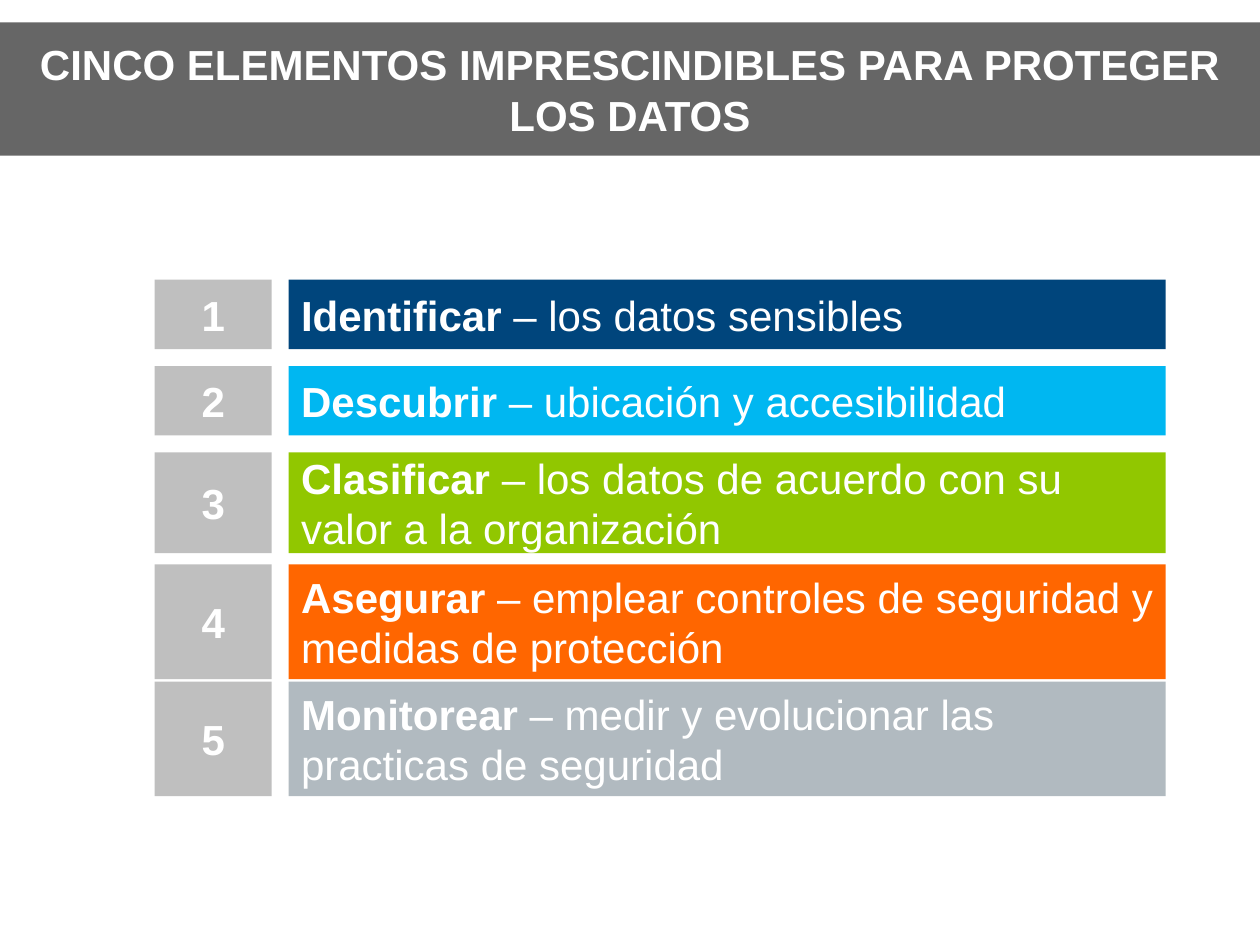
from lxml import etree
from pptx import Presentation
from pptx.dml.color import RGBColor
from pptx.enum import shapes, text
from pptx.oxml import ns
from pptx.util import Cm, Pt

WHITE = RGBColor(0xFF, 0xFF, 0xFF)
CHARCOAL = RGBColor(0x26, 0x26, 0x26)
SILVER = RGBColor(0xBF, 0xBF, 0xBF)
NAVY = RGBColor(0x00, 0x45, 0x7C)
SKY = RGBColor(0x00, 0xB7, 0xF1)
GREEN = RGBColor(0x91, 0xC7, 0x00)
ORANGE = RGBColor(0xFF, 0x66, 0x00)
STEEL = RGBColor(0xB1, 0xBA, 0xC0)

HEADING = "CINCO ELEMENTOS IMPRESCINDIBLES PARA PROTEGER LOS DATOS"
ELEMENTS = [
    ("Identificar", " – los datos sensibles", NAVY, 5.64, 1.4),
    ("Descubrir", " – ubicación y accesibilidad", SKY, 7.38, 1.4),
    ("Clasificar", " – los datos de acuerdo con su valor a la organización", GREEN, 9.12, 2.03),
    ("Asegurar", " – emplear controles de seguridad y medidas de protección", ORANGE, 11.38, 2.31),
    ("Monitorear", " – medir y evolucionar las practicas de seguridad", STEEL, 13.74, 2.31),
]
SLIDE_WIDTH, SLIDE_HEIGHT = 25.4, 19.05
BAND_TOP, BAND_HEIGHT = 0.45, 2.69
NUMBER_LEFT, NUMBER_WIDTH = 3.12, 2.36
BAR_LEFT, BAR_WIDTH = 5.82, 17.68


def add_box(slide, left, top, width, height, color):
    box = slide.shapes.add_shape(
        shapes.MSO_SHAPE.RECTANGLE, Cm(left), Cm(top), Cm(width), Cm(height)
    )
    box.shadow.inherit = False
    box.fill.solid()
    box.fill.fore_color.rgb = color
    box.line.fill.background()
    return box


def write(box, bold_words, plain_words="", align=text.PP_ALIGN.CENTER, size=24, color=WHITE):
    frame = box.text_frame
    frame.word_wrap = True
    frame.vertical_anchor = text.MSO_ANCHOR.MIDDLE
    paragraph = frame.paragraphs[0]
    paragraph.alignment = align
    for words, bold in ((bold_words, True), (plain_words, False)):
        if words:
            run = paragraph.add_run()
            run.text = words
            run.font.name = "Arial"
            run.font.size = Pt(size)
            run.font.bold = bold
            run.font.color.rgb = color
    return frame


def add_heading(slide):
    band = add_box(slide, 0, BAND_TOP, SLIDE_WIDTH, BAND_HEIGHT, CHARCOAL)
    band_color = band.fill._xPr.find(".//" + ns.qn("a:srgbClr"))
    etree.SubElement(band_color, ns.qn("a:alpha"), val="70000")
    heading = slide.shapes.add_textbox(
        Cm(0), Cm(BAND_TOP), Cm(SLIDE_WIDTH), Cm(BAND_HEIGHT)
    )
    frame = write(heading, HEADING)
    frame.margin_left = frame.margin_right = Cm(0.33)
    frame.margin_top = frame.margin_bottom = Cm(0.18)


def main():
    deck = Presentation()
    deck.slide_width, deck.slide_height = Cm(SLIDE_WIDTH), Cm(SLIDE_HEIGHT)
    slide = deck.slides.add_slide(deck.slide_layouts[6])
    add_heading(slide)
    for number, (action, detail, color, top, height) in enumerate(ELEMENTS, 1):
        bar = add_box(slide, BAR_LEFT, top, BAR_WIDTH, height, color)
        write(bar, action, detail, align=text.PP_ALIGN.LEFT)
        badge = add_box(slide, NUMBER_LEFT, top, NUMBER_WIDTH, height, SILVER)
        write(badge, str(number))
    deck.save("out.pptx")


if __name__ == "__main__":
    main()
